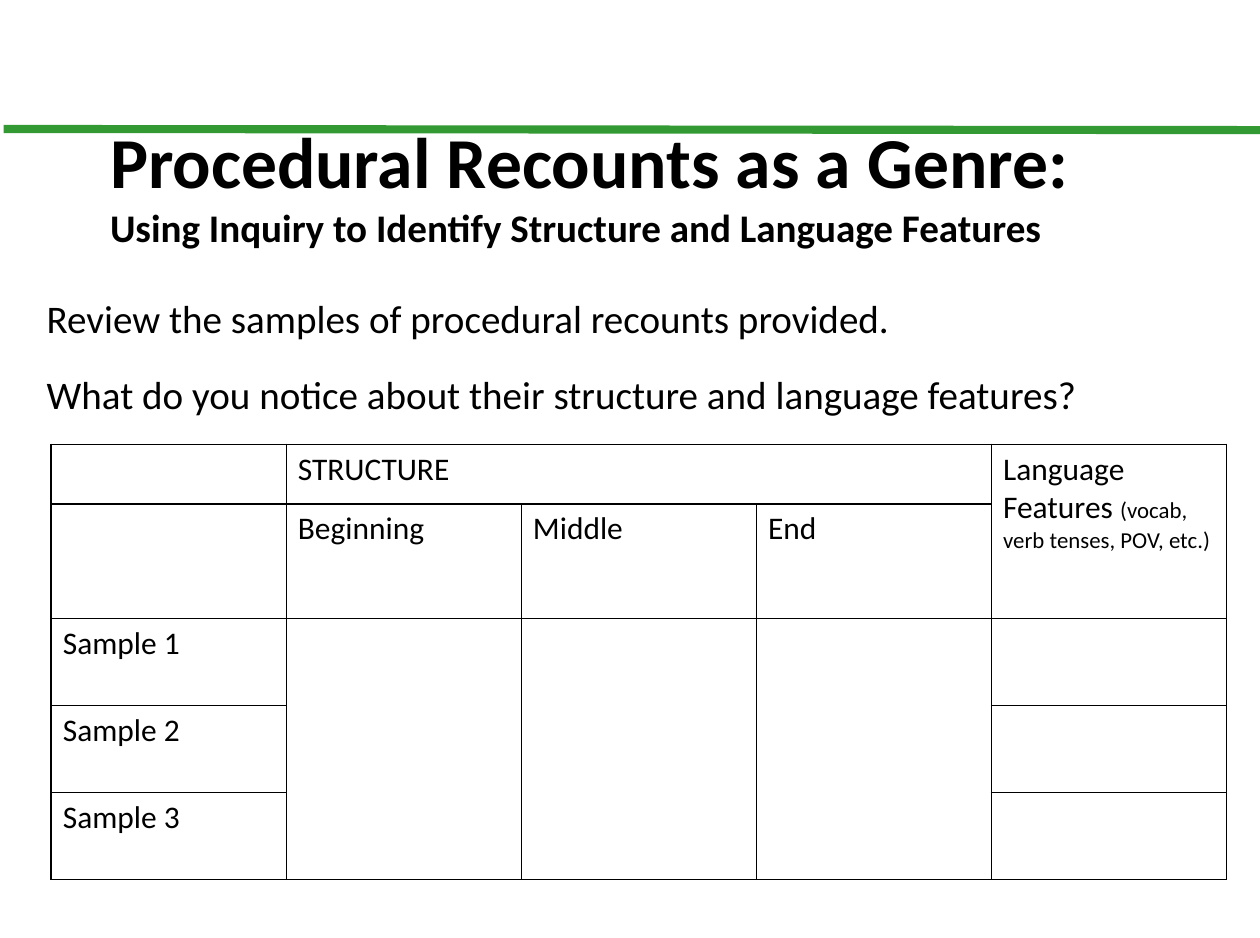
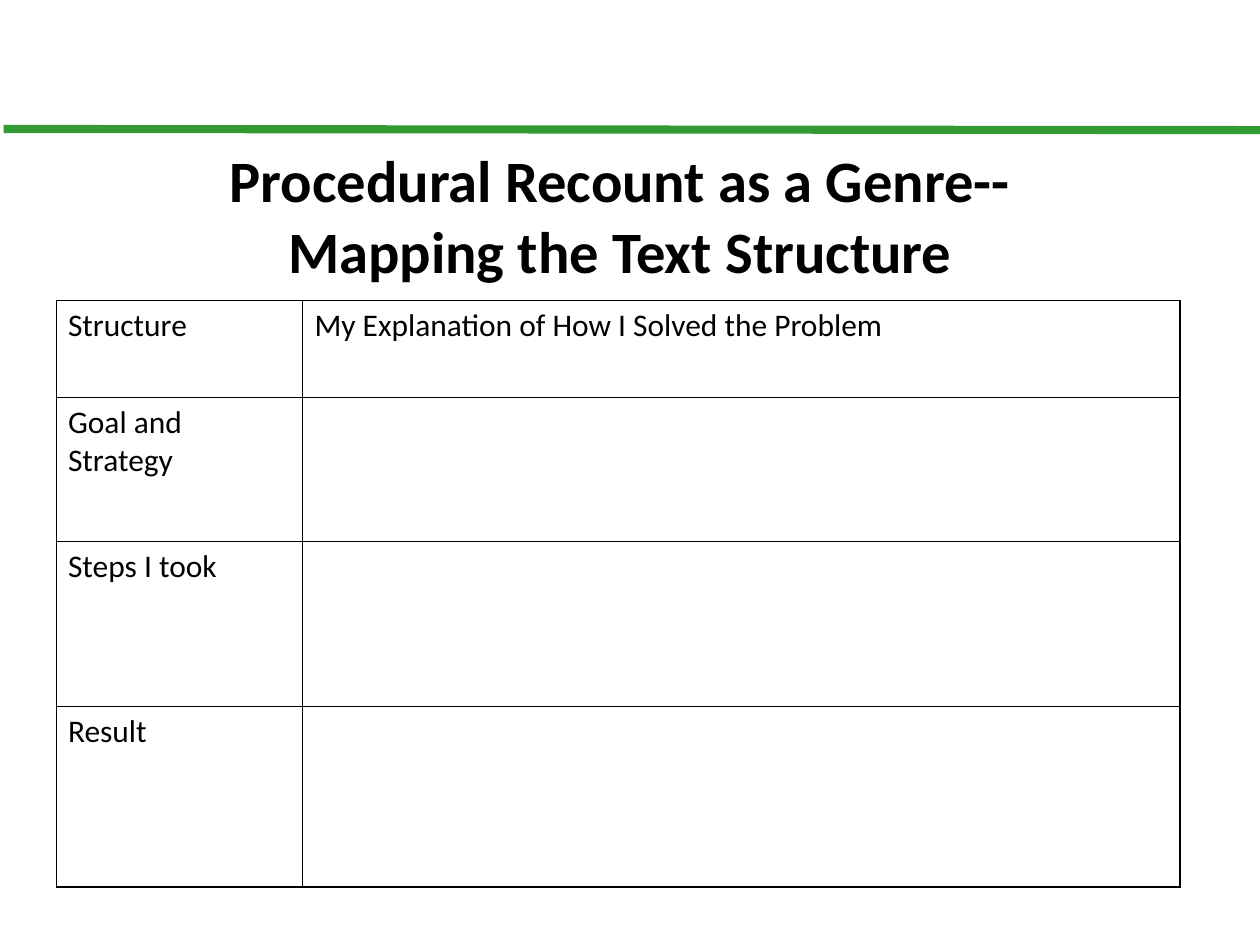
from lxml import etree
from pptx import Presentation
from pptx.dml.color import RGBColor
from pptx.enum.shapes import MSO_CONNECTOR
from pptx.enum.text import MSO_AUTO_SIZE, PP_ALIGN
from pptx.oxml.ns import qn
from pptx.util import Pt

STRAIGHT = MSO_CONNECTOR.STRAIGHT
FIT_SHAPE = MSO_AUTO_SIZE.SHAPE_TO_FIT_TEXT
LEFT, CENTER = PP_ALIGN.LEFT, PP_ALIGN.CENTER

BLACK = RGBColor(0x00, 0x00, 0x00)
GREEN = RGBColor(0x33, 0x99, 0x33)
FONT = "Calibri"
CELL_SIZE = 19.3
BORDER = 1


class Deck:
    """Holds the shared style and the current slide."""

    def __init__(self, width, height):
        self.prs = Presentation()
        self.prs.slide_width, self.prs.slide_height = Pt(width), Pt(height)
        self.slide = None

    def new_slide(self):
        self.slide = self.prs.slides.add_slide(self.prs.slide_layouts[6])
        self.rule(2.2, 79.2, 774, 79.9)

    def rule(self, x1, y1, x2, y2):
        line = self.slide.shapes.add_connector(
            STRAIGHT, Pt(x1), Pt(y1), Pt(x2), Pt(y2))
        line.line.color.rgb = GREEN
        line.line.width = Pt(5)
        etree.SubElement(line._element.spPr, qn("a:effectLst"))

    def run(self, paragraph, text, size, bold=False):
        run = paragraph.add_run()
        run.text = text
        run.font.name = FONT
        run.font.size = Pt(size)
        run.font.bold = bold
        run.font.color.rgb = BLACK

    def paragraphs(self, frame, paragraphs, bold=False, align=LEFT, gap=0):
        """Each paragraph is a list of (text, size) runs."""
        for i, runs in enumerate(paragraphs):
            paragraph = frame.add_paragraph() if i else frame.paragraphs[0]
            paragraph.alignment = align
            paragraph.space_after = Pt(gap)
            for text, size in runs:
                self.run(paragraph, text, size, bold)

    def text(self, x, y, width, height, paragraphs, **style):
        frame = self.slide.shapes.add_textbox(
            Pt(x), Pt(y), Pt(width), Pt(height)).text_frame
        frame.word_wrap = True
        frame.auto_size = FIT_SHAPE
        self.paragraphs(frame, paragraphs, **style)

    def title(self, x, y, height, lines, align=LEFT):
        self.text(x, y, 639.4, height, [[line] for line in lines],
                  bold=True, align=align)

    def border(self, cell):
        properties = cell._tc.get_or_add_tcPr()
        for side in ("a:lnL", "a:lnR", "a:lnT", "a:lnB"):
            edge = etree.SubElement(properties, qn(side), w=str(Pt(BORDER)))
            fill = etree.SubElement(edge, qn("a:solidFill"))
            etree.SubElement(fill, qn("a:srgbClr"), val=str(BLACK))

    def table(self, x, y, columns, rows, contents, merges=()):
        """contents maps (row, column) to paragraphs; merges lists corner pairs."""
        table = self.slide.shapes.add_table(
            len(rows), len(columns), Pt(x), Pt(y),
            Pt(sum(columns)), Pt(sum(rows))).table
        table.first_row = table.horz_banding = False
        for column, width in zip(table.columns, columns):
            column.width = Pt(width)
        for row, height in zip(table.rows, rows):
            row.height = Pt(height)
        for cell in table.iter_cells():
            self.border(cell)
            cell.fill.background()
        for first, last in merges:
            table.cell(*first).merge(table.cell(*last))
        for position, paragraphs in contents.items():
            self.paragraphs(table.cell(*position).text_frame, paragraphs)


def label(*lines):
    return [[(line, CELL_SIZE)] for line in lines]


def inquiry_slide(deck):
    deck.new_slide()

    # Instructions
    instructions = ["Review the samples of procedural recounts provided.",
                    "What do you notice about their structure and language features?"]
    deck.text(21.6, 177.1, 678.2, 83.5,
              [[(line, 24)] for line in instructions], gap=18)

    # Comparison grid
    contents = {
        (0, 1): label("STRUCTURE"),
        (0, 4): [[("Language Features ", CELL_SIZE),
                  ("(vocab, verb tenses, POV, etc.)", 14)]],
    }
    for column, part in enumerate(("Beginning", "Middle", "End"), 1):
        contents[1, column] = label(part)
    for sample in (1, 2, 3):
        contents[sample + 1, 0] = label(f"Sample {sample}")
    merges = [((0, 1), (0, 3)), ((0, 4), (1, 4))]
    merges += [((2, column), (4, column)) for column in (1, 2, 3)]
    deck.table(31.4, 272.9, [144.4] * 5, [36.7, 70.2] + [53.4] * 3,
               contents, merges)

    # Title
    deck.title(60.5, 68.4, 90, [
        ("Procedural Recounts as a Genre:", 44),
        ("Using Inquiry to Identify Structure and Language Features", 24)])


def mapping_slide(deck):
    deck.new_slide()

    # Title
    deck.title(61.2, 85, 94.3, [
        ("Procedural Recount as a Genre--", 36),
        ("Mapping the Text Structure", 36)], align=CENTER)

    # Text structure map
    stages = [("Structure",), ("Goal and", "Strategy"),
              ("Steps I took",), ("Result",)]
    contents = {(row, 0): label(*lines) for row, lines in enumerate(stages)}
    contents[0, 1] = label("My Explanation of How I Solved the Problem")
    deck.table(34.6, 184.4, [151.4, 538.8], [59.6, 88.6, 101.3, 110.8],
               contents)


def main():
    deck = Deck(774, 576)
    inquiry_slide(deck)
    mapping_slide(deck)
    deck.prs.save("out.pptx")


if __name__ == "__main__":
    main()
